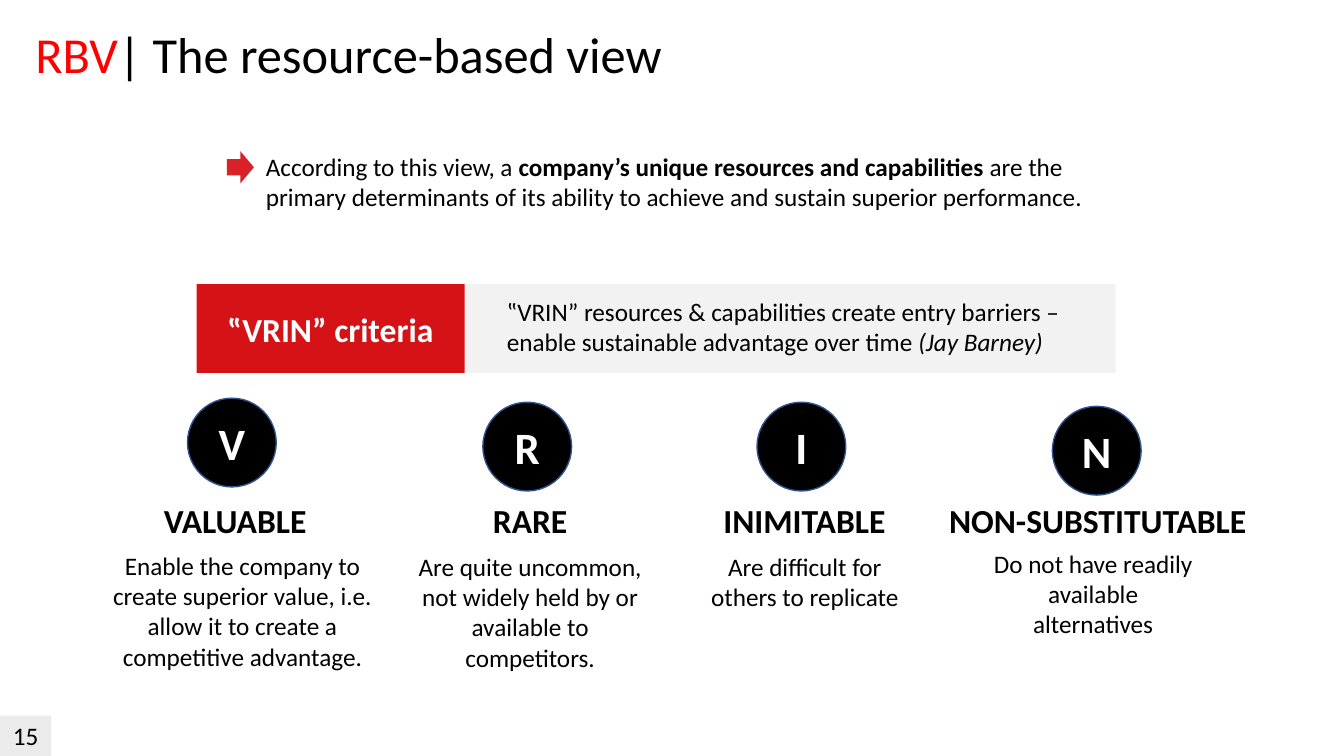
"""Build the slide on the resource-based view and its VRIN criteria."""
from dataclasses import dataclass

import pptx
import pptx.dml.color
import pptx.enum.shapes
import pptx.enum.text
import pptx.oxml
import pptx.oxml.ns
import pptx.util

Pt = pptx.util.Pt
Shape = pptx.enum.shapes.MSO_SHAPE
Align = pptx.enum.text.PP_ALIGN
Anchor = pptx.enum.text.MSO_ANCHOR

TITLE = [[("RBV", "accent"), ("| The resource-based view", "")]]
STATEMENT = [[
    ("According to this view, a ", ""),
    ("company’s unique resources and capabilities ", "bold"),
    ("are the primary determinants of its ability to achieve and sustain "
     "superior performance.", ""),
]]
BANNER_LABEL = [[("‟VRIN” criteria", "bold")]]
BANNER_TEXT = [
    [("‟VRIN” resources & capabilities create entry barriers –", "")],
    [("enable sustainable advantage over time ", ""), ("(Jay Barney)", "italic")],
]
PAGE_NUMBER = [[("15", "")]]
CRITERIA = [
    {"name": "VALUABLE", "lines": ["Enable the company to create superior value, i.e.",
                                   "allow it to create a competitive advantage."],
     "circle": (165.6, 284.4), "label": (168, 121), "detail": (173.2, 389.5, 213.8)},
    {"name": "RARE", "lines": ["Are quite uncommon, not widely held by or available to",
                               "competitors."],
     "circle": (376.6, 287.3), "label": (378.7, 121), "detail": (378.7, 390.2, 184.3)},
    {"name": "INIMITABLE", "lines": ["Are difficult for others to replicate"],
     "circle": (572.4, 287.3), "label": (574.6, 140), "detail": (574.9, 390.2, 166.3)},
    {"name": "NON-SUBSTITUTABLE", "lines": ["Do not have readily available alternatives"],
     "circle": (783.4, 290.2), "label": (784.1, 250.6), "detail": (780.8, 388.1, 166.3)},
]


@dataclass(frozen=True)
class Theme:
    """Colours and type sizes of the slide."""
    font: str = "Calibri"
    black: str = "000000"
    white: str = "FFFFFF"
    title_red: str = "FF0000"
    arrow_red: str = "DA2128"
    banner_red: str = "D51317"
    banner_grey: str = "F2F2F2"
    number_grey: str = "BFBFBF"
    outline: str = "325491"
    title_size: int = 36
    letter_size: int = 32
    label_size: int = 24
    body_size: int = 18


THEME = Theme()
CIRCLE = 63.4
LABEL_TOP, LABEL_HEIGHT = 353.5, 36
LINE_HEIGHT = 21.6
BANNER_LEFT, BANNER_TOP, BANNER_HEIGHT = 140.4, 203, 63.4
BANNER_LABEL_WIDTH, BANNER_TEXT_WIDTH = 191.5, 465


def rgb(code):
    """Turn a hex code into a colour."""
    return pptx.dml.color.RGBColor.from_string(code)


def write(box, paragraphs, size, color=THEME.black, align=Align.LEFT,
          anchor=Anchor.TOP, wrap=True):
    """Fill a box with paragraphs of styled spans."""
    frame = box.text_frame
    frame.word_wrap = wrap
    frame.vertical_anchor = anchor
    for index, spans in enumerate(paragraphs):
        para = frame.add_paragraph() if index else frame.paragraphs[0]
        para.alignment = align
        for text, style in spans:
            span = para.add_run()
            span.text = text
            span.font.name = THEME.font
            span.font.size = Pt(size)
            span.font.bold = style == "bold"
            span.font.italic = style == "italic"
            span.font.color.rgb = rgb(THEME.title_red if style == "accent" else color)


def add_box(page, left, top, width, height):
    """Add an empty text box."""
    return page.shapes.add_textbox(Pt(left), Pt(top), Pt(width), Pt(height))


def add_figure(page, kind, left, top, width, height, fill, line=None):
    """Add a flat filled shape."""
    figure = page.shapes.add_shape(kind, Pt(left), Pt(top), Pt(width), Pt(height))
    figure.shadow.inherit = False
    figure.fill.solid()
    figure.fill.fore_color.rgb = rgb(fill)
    if line:
        figure.line.color.rgb = rgb(line)
        figure.line.width = Pt(1)
    else:
        figure.line.fill.background()
    return figure


def add_heading(page):
    """Place the title, the page number and the opening statement."""
    title = page.shapes.title
    title.left, title.top, title.width, title.height = Pt(18), Pt(18), Pt(828), Pt(104.4)
    write(title, TITLE, THEME.title_size)
    title.text_frame.paragraphs[0].line_spacing = 0.9

    number = add_figure(page, Shape.RECTANGLE, 0, 511.2, 36.7, 28.8, THEME.number_grey)
    write(number, PAGE_NUMBER, THEME.body_size, align=Align.CENTER, wrap=False)
    tint = number.fill._xPr.find(".//" + pptx.oxml.ns.qn("a:srgbClr"))
    tint.append(pptx.oxml.parse_xml(
        '<a:alpha %s val="30000"/>' % pptx.oxml.ns.nsdecls("a")))

    write(add_box(page, 182.9, 104.4, 621.4, 72.7), STATEMENT, THEME.body_size)
    add_figure(page, Shape.RIGHT_ARROW, 162, 108, 19.4, 23, THEME.arrow_red)


def add_banner(page):
    """Place the two-part banner."""
    split = BANNER_LEFT + BANNER_LABEL_WIDTH
    add_figure(page, Shape.RECTANGLE, split, BANNER_TOP, BANNER_TEXT_WIDTH,
               BANNER_HEIGHT, THEME.banner_grey)
    write(add_box(page, split + 23, BANNER_TOP + 5, 418.3, 51.1), BANNER_TEXT,
          THEME.body_size, wrap=False)
    label = add_figure(page, Shape.RECTANGLE, BANNER_LEFT, BANNER_TOP,
                       BANNER_LABEL_WIDTH, BANNER_HEIGHT, THEME.banner_red)
    write(label, BANNER_LABEL, THEME.label_size, THEME.white, Align.CENTER, Anchor.MIDDLE)


def add_criterion(page, criterion):
    """Place one criterion: lettered circle, label and detail."""
    name, lines = criterion["name"], criterion["lines"]
    center, top = criterion["circle"]
    circle = add_figure(page, Shape.OVAL, center - CIRCLE / 2, top, CIRCLE, CIRCLE,
                        THEME.black, THEME.outline)
    write(circle, [[(name[0], "bold")]], THEME.letter_size, THEME.white,
          Align.CENTER, Anchor.MIDDLE)

    center, width = criterion["label"]
    label = add_box(page, center - width / 2, LABEL_TOP, width, LABEL_HEIGHT)
    write(label, [[(name, "bold")]], THEME.label_size, align=Align.CENTER)

    center, top, width = criterion["detail"]
    detail = add_box(page, center - width / 2, top, width, 2 * len(lines) * LINE_HEIGHT + 8)
    write(detail, [[(line, "")] for line in lines], THEME.body_size, align=Align.CENTER)


def main():
    """Build and save the deck."""
    deck = pptx.Presentation()
    deck.slide_width, deck.slide_height = Pt(960), Pt(540)
    page = deck.slides.add_slide(deck.slide_layouts.get_by_name("Title Only"))
    add_heading(page)
    add_banner(page)
    for criterion in CRITERIA:
        add_criterion(page, criterion)
    deck.save("out.pptx")


if __name__ == "__main__":
    main()
